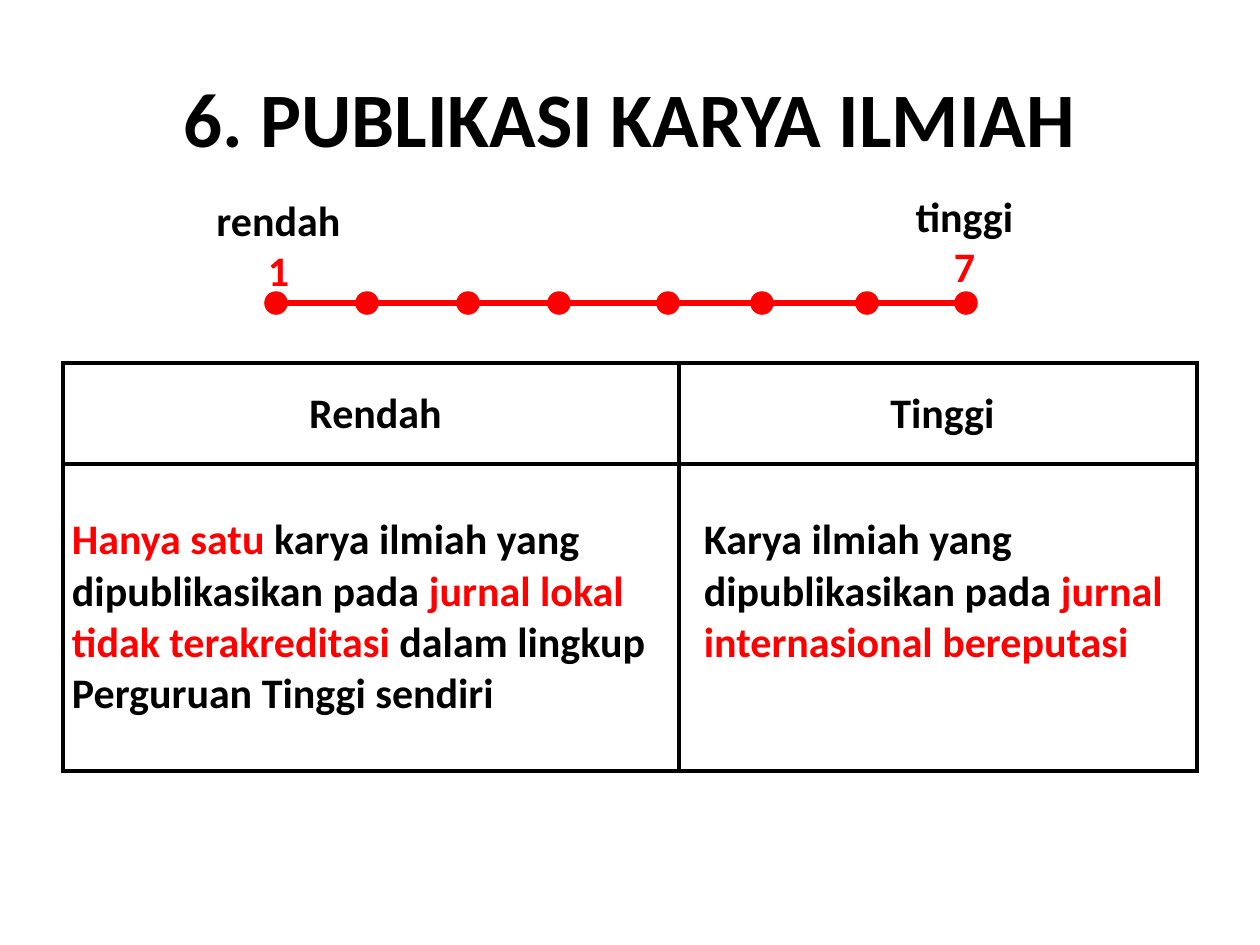
from lxml.etree import SubElement as Sub
from pptx import Presentation
from pptx.dml.color import RGBColor as RGB
from pptx.enum.shapes import MSO_CONNECTOR as Link, MSO_SHAPE as Shape
from pptx.enum.text import MSO_ANCHOR as Anchor, MSO_AUTO_SIZE as Auto, PP_ALIGN as Align
from pptx.oxml.ns import qn
from pptx.util import Pt

SCALE = 914400 / 126
BLACK, RED, WHITE = RGB(0, 0, 0), RGB(255, 0, 0), RGB(255, 255, 255)


def px(*vals):
    return [round(v * SCALE) for v in vals]


def write(para, runs, size=24, align=Align.CENTER):
    para.alignment = align
    for text, color in runs:
        run = para.add_run()
        run.text = text
        look = {"name": "Calibri", "size": Pt(size), "bold": True}
        for key, val in look.items():
            setattr(run.font, key, val)
        run.font.color.rgb = color


deck = Presentation()
deck.slide_width, deck.slide_height = px(1260, 945)
slide = deck.slides.add_slide(deck.slide_layouts[6])
shapes = slide.shapes

# Title
frame = shapes.add_textbox(*px(63, 38, 1134, 157)).text_frame
frame.word_wrap = True
frame.vertical_anchor = Anchor.MIDDLE
write(frame.paragraphs[0], [("6. PUBLIKASI KARYA ILMIAH", BLACK)], 44)

# Table: (heading, left indent, body runs) per column
COLS = [
    ("Rendah", 9, [
        ("Hanya satu ", RED),
        ("karya ilmiah yang dipublikasikan pada ", BLACK),
        ("jurnal lokal tidak terakreditasi ", RED),
        ("dalam lingkup Perguruan Tinggi sendiri", BLACK)]),
    ("Tinggi", 25, [
        ("Karya ilmiah yang dipublikasikan pada ", BLACK),
        ("jurnal internasional bereputasi", RED)]),
]
table = shapes.add_table(2, 2, *px(63, 363, 1134, 408)).table
for col, wide in zip(table.columns, px(616, 518)):
    col.width = wide
for row, high in zip(table.rows, px(101, 307)):
    row.height = high
for c, (head, left, body) in enumerate(COLS):
    for r, runs in enumerate([[(head, BLACK)], body]):
        cell = table.cell(r, c)
        # The body starts one line below the top of its cell
        pads = {"left": left if r else 9, "top": 51 * r, "right": 0, "bottom": 0}
        for side, pad in pads.items():
            setattr(cell, "margin_" + side, px(pad)[0])
        para = cell.text_frame.paragraphs[0]
        write(para, runs, align=Align.LEFT if r else Align.CENTER)
        para.line_spacing = 1.0 if r else 1.5
        # Borders go before the fill
        props = cell._tc.get_or_add_tcPr()
        for side in "LRTB":
            edge = Sub(props, qn("a:ln" + side), w=str(Pt(2.25)))
            fill = Sub(edge, qn("a:solidFill"))
            Sub(fill, qn("a:srgbClr"), val=str(BLACK))
        cell.fill.solid()
        cell.fill.fore_color.rgb = WHITE

# Scale line
line = shapes.add_connector(Link.STRAIGHT, *px(273, 303, 960, 303))
line.line.color.rgb = RED
line.line.width = Pt(3)
Sub(line._element.spPr, qn("a:effectLst"))

# Scale dots
for x in (266, 357, 458, 549, 658, 752, 857, 956):
    dot = shapes.add_shape(Shape.FLOWCHART_CONNECTOR, *px(x, 293, 20, 20))
    dot.shadow.inherit = False
    dot.fill.solid()
    dot.fill.fore_color.rgb = dot.line.color.rgb = RED
    dot.line.width = Pt(2)

# Scale ends
for word, mark, x, y, wide in (("rendah", "1", 203, 188, 151),
                               ("tinggi", "7", 902, 184, 125)):
    frame = shapes.add_textbox(*px(x, y, wide, 115)).text_frame
    frame.word_wrap = False
    frame.auto_size = Auto.SHAPE_TO_FIT_TEXT
    write(frame.paragraphs[0], [(word, BLACK)])
    write(frame.add_paragraph(), [(mark, RED)])

deck.save("out.pptx")
